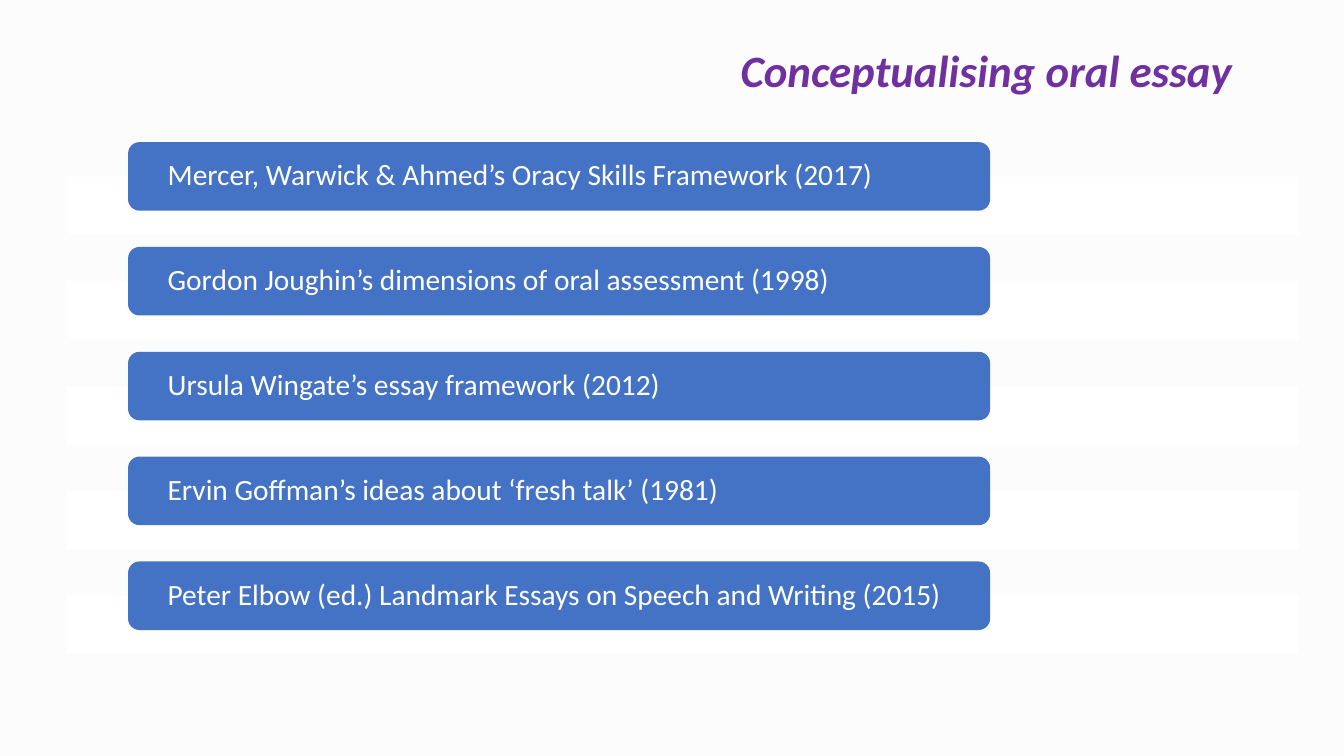
from dataclasses import dataclass

from pptx import Presentation
from pptx.dml.color import RGBColor
from pptx.enum.shapes import MSO_SHAPE
from pptx.enum.text import MSO_ANCHOR, PP_ALIGN
from pptx.util import Inches, Pt

RECTANGLE = MSO_SHAPE.RECTANGLE
ROUNDED = MSO_SHAPE.ROUNDED_RECTANGLE
MIDDLE = MSO_ANCHOR.MIDDLE
LEFT = PP_ALIGN.LEFT
CENTER = PP_ALIGN.CENTER

TITLE = "Conceptualising oral essay"
SOURCES = [
    "Mercer, Warwick & Ahmed’s Oracy Skills Framework (2017)",
    "Gordon Joughin’s dimensions of oral assessment (1998)",
    "Ursula Wingate’s essay framework (2012)",
    "Ervin Goffman’s ideas about ‘fresh talk’ (1981)",
    "Peter Elbow (ed.) Landmark Essays on Speech and Writing (2015)",
]


@dataclass(frozen=True)
class Theme:
    font: str = "Calibri"
    background: str = "FCFCFC"
    band: str = "FFFFFF"
    label: str = "4472C4"
    label_text: str = "FFFFFF"
    title: str = "7030A0"
    title_size: int = 32
    label_size: int = 21


THEME = Theme()
SLIDE_WIDTH, SLIDE_HEIGHT = 13.33, 7.5
TITLE_BOX = (7.15, 0.4, 5.27, 0.64)
ROW_TOP, ROW_PITCH = 1.41, 1.04
LABEL_LEFT, LABEL_WIDTH, LABEL_HEIGHT = 1.27, 8.55, 0.68
BAND_LEFT, BAND_WIDTH, BAND_HEIGHT = 0.66, 12.22, 0.58
BAND_DROP = LABEL_HEIGHT / 2
LABEL_INSET = 0.36


def color(value):
    return RGBColor.from_string(value)


def add_bar(slide, kind, box, fill):
    shape = slide.shapes.add_shape(kind, *map(Inches, box))
    shape.shadow.inherit = False
    shape.fill.solid()
    shape.fill.fore_color.rgb = color(fill)
    shape.line.fill.background()
    return shape


def write(shape, text, size, text_color, alignment, inset, emphasis=False):
    frame = shape.text_frame
    frame.text = text
    frame.word_wrap = True
    frame.vertical_anchor = MIDDLE
    frame.margin_left = frame.margin_right = Inches(inset)
    frame.margin_top = frame.margin_bottom = 0
    paragraph = frame.paragraphs[0]
    paragraph.alignment = alignment
    paragraph.line_spacing = 0.9
    font = paragraph.runs[0].font
    font.name = THEME.font
    font.size = Pt(size)
    font.bold = font.italic = emphasis
    font.color.rgb = color(text_color)


def add_title(slide):
    title = slide.shapes.title
    title.left, title.top, title.width, title.height = map(Inches, TITLE_BOX)
    write(title, TITLE, THEME.title_size, THEME.title, CENTER, 0.1, True)


def add_source(slide, row, source):
    top = ROW_TOP + row * ROW_PITCH
    band_box = (BAND_LEFT, top + BAND_DROP, BAND_WIDTH, BAND_HEIGHT)
    label_box = (LABEL_LEFT, top, LABEL_WIDTH, LABEL_HEIGHT)
    add_bar(slide, RECTANGLE, band_box, THEME.band)
    label = add_bar(slide, ROUNDED, label_box, THEME.label)
    write(label, source, THEME.label_size, THEME.label_text, LEFT, LABEL_INSET)


def main():
    presentation = Presentation()
    presentation.slide_width = Inches(SLIDE_WIDTH)
    presentation.slide_height = Inches(SLIDE_HEIGHT)
    title_only = presentation.slide_layouts.get_by_name("Title Only")
    slide = presentation.slides.add_slide(title_only)
    slide.background.fill.solid()
    slide.background.fill.fore_color.rgb = color(THEME.background)
    add_title(slide)
    for row, source in enumerate(SOURCES):
        add_source(slide, row, source)
    presentation.save("out.pptx")


if __name__ == "__main__":
    main()
